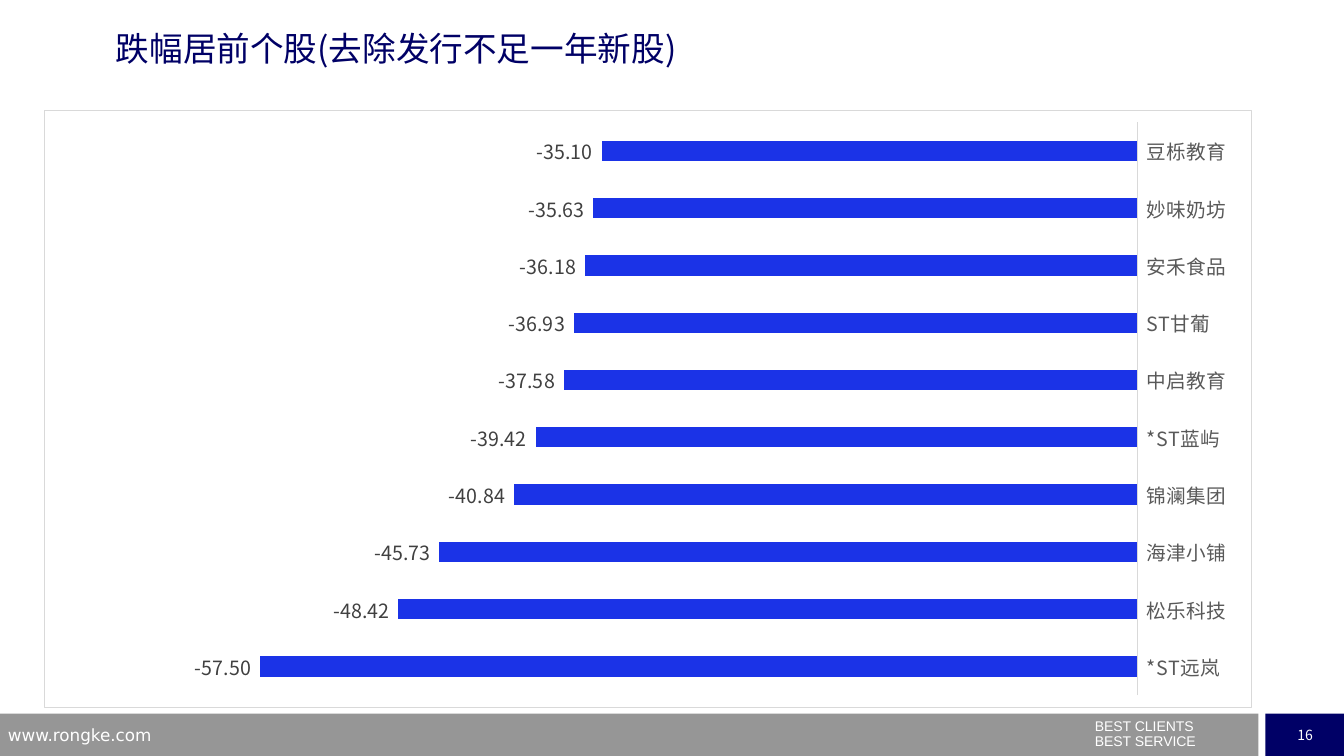
from lxml import etree
from pptx import Presentation
from pptx.chart.data import CategoryChartData
from pptx.dml.color import RGBColor
from pptx.enum.chart import XL_CHART_TYPE as ChartType
from pptx.enum.chart import XL_LABEL_POSITION as LabelPosition
from pptx.enum.chart import XL_TICK_LABEL_POSITION as TickLabels
from pptx.enum.chart import XL_TICK_MARK as TickMark
from pptx.enum.shapes import MSO_SHAPE as Shape
from pptx.enum.text import MSO_ANCHOR as Anchor
from pptx.enum.text import MSO_AUTO_SIZE as AutoSize
from pptx.enum.text import PP_ALIGN as Align
from pptx.oxml import parse_xml
from pptx.oxml.ns import nsdecls, qn
from pptx.util import Inches, Pt

CJK = "Noto Sans CJK SC"
NAVY, GREY, WHITE, BLUE, PALE = "000066", "969696", "FFFFFF", "1B33E7", "D9D9D9"
NUMBER_FORMAT = "0.00_ "
DECLINES = {
    "*ST远岚": -57.5,
    "松乐科技": -48.42,
    "海津小铺": -45.73,
    "锦澜集团": -40.84,
    "*ST蓝屿": -39.42,
    "中启教育": -37.58,
    "ST甘葡": -36.93,
    "安禾食品": -36.18,
    "妙味奶坊": -35.63,
    "豆栎教育": -35.1,
}
PLOT_LAYOUT = {"x": 0.02, "y": 0.02, "w": 0.885, "h": 0.96}


def color(hex_value):
    """Turn a hex string into a colour."""
    return RGBColor.from_string(hex_value)


def set_all(target, **values):
    """Set every given attribute on the target."""
    for name, value in values.items():
        setattr(target, name, value)


def style_font(font, size, hex_value, name=CJK):
    """Give a font its size, colour and typeface."""
    set_all(font, size=Pt(size), name=name)
    font.color.rgb = color(hex_value)


def match_east_asian(element):
    """Use each Latin typeface for East Asian text as well."""
    for latin in list(element.iter(qn("a:latin"))):
        east_asian = etree.Element(qn("a:ea"), typeface=latin.get("typeface"))
        latin.addnext(east_asian)


def write_lines(frame, lines, size, hex_value, name=CJK, **paragraph_format):
    """Write styled lines, one paragraph each."""
    for index, line in enumerate(lines):
        paragraph = frame.paragraphs[0] if index == 0 else frame.add_paragraph()
        run = paragraph.add_run()
        run.text = line
        style_font(run.font, size, hex_value, name)
        match_east_asian(paragraph._p)
        set_all(paragraph, **paragraph_format)
        if index:
            paragraph.space_before = Pt(size / 2)


def add_bar(slide, place, fill):
    """Add a plain filled rectangle."""
    bar = slide.shapes.add_shape(Shape.RECTANGLE, *map(Inches, place))
    bar.shadow.inherit = False
    bar.fill.solid()
    bar.fill.fore_color.rgb = color(fill)
    bar.line.fill.background()
    return bar


def add_text(slide, place, lines, size, name, **paragraph_format):
    """Add a white wrapped text box."""
    frame = slide.shapes.add_textbox(*map(Inches, place)).text_frame
    frame.word_wrap = True
    write_lines(frame, lines, size, WHITE, name, **paragraph_format)


def add_footer(slide):
    """Add the footer band with address, slogan and page number."""
    add_bar(slide, (0, 7.08, 12.48, 0.42), GREY)
    page = add_bar(slide, (12.55, 7.08, 0.79, 0.42), NAVY).text_frame
    set_all(page, word_wrap=False, vertical_anchor=Anchor.MIDDLE)
    write_lines(page, ["16"], 10, WHITE, alignment=Align.CENTER)
    slogan = ["BEST CLIENTS", "BEST SERVICE"]
    add_text(slide, (10.76, 7.14, 2.56, 0.36), slogan, 10, "Arial", line_spacing=0.5)
    add_text(slide, (-0.02, 7.14, 3.22, 0.26), ["www.rongke.com"], 12, "DejaVu Sans")


def fill_title(slide, text):
    """Place and format the slide title."""
    title = slide.shapes.title
    set_all(title, left=Inches(1.15), top=Inches(0.28), width=Inches(9), height=Inches(0.58))
    frame = title.text_frame
    set_all(frame, margin_left=0, margin_top=0, margin_right=0, margin_bottom=0,
            vertical_anchor=Anchor.TOP, auto_size=AutoSize.NONE, word_wrap=True)
    write_lines(frame, [text], 24, NAVY, alignment=Align.LEFT)


def frame_chart(chart):
    """Draw the chart border and fix the inner plot area."""
    space = chart._chartSpace
    border = parse_xml(
        f'<c:spPr {nsdecls("c", "a")}><a:noFill/><a:ln w="{Pt(0.75)}"><a:solidFill>'
        f'<a:srgbClr val="{PALE}"/></a:solidFill></a:ln></c:spPr>')
    space.find(qn("c:txPr")).addprevious(border)
    plot_area = space.find(qn("c:chart")).find(qn("c:plotArea"))
    for old_layout in plot_area.findall(qn("c:layout")):
        plot_area.remove(old_layout)
    modes = '<c:xMode val="edge"/><c:yMode val="edge"/>'
    sizes = "".join(f'<c:{key} val="{value}"/>' for key, value in PLOT_LAYOUT.items())
    plot_area.insert(0, parse_xml(
        f'<c:layout {nsdecls("c")}><c:manualLayout><c:layoutTarget val="inner"/>'
        f'{modes}{sizes}</c:manualLayout></c:layout>'))


def add_decline_chart(slide):
    """Add the bar chart of the largest declines."""
    data = CategoryChartData(number_format=NUMBER_FORMAT)
    data.categories = list(DECLINES)
    data.add_series("Series 1", list(DECLINES.values()))
    place = map(Inches, (0.44, 1.09, 11.98, 5.93))
    chart = slide.shapes.add_chart(ChartType.BAR_CLUSTERED, *place, data).chart
    set_all(chart, has_title=False, has_legend=False)
    style_font(chart.font, 10, "000000")

    stocks = chart.category_axis
    set_all(stocks, major_tick_mark=TickMark.NONE, minor_tick_mark=TickMark.NONE,
            tick_label_position=TickLabels.HIGH, has_major_gridlines=False)
    style_font(stocks.tick_labels.font, 14, "595959")
    stocks.format.line.width = Pt(0.75)
    stocks.format.line.color.rgb = color(PALE)
    set_all(chart.value_axis, visible=False, has_major_gridlines=False,
            minimum_scale=-70, maximum_scale=0)
    set_all(chart.value_axis.tick_labels, number_format=NUMBER_FORMAT,
            number_format_is_linked=False)

    plot = chart.plots[0]
    set_all(plot, gap_width=182, vary_by_categories=False, has_data_labels=True)
    set_all(plot.data_labels, show_value=True, position=LabelPosition.OUTSIDE_END,
            number_format=NUMBER_FORMAT, number_format_is_linked=False)
    style_font(plot.data_labels.font, 14, "404040")
    declines = plot.series[0]
    declines.invert_if_negative = False
    declines.format.fill.solid()
    declines.format.fill.fore_color.rgb = color(BLUE)
    frame_chart(chart)
    match_east_asian(chart._chartSpace)


def main():
    """Build and save the slide."""
    deck = Presentation()
    set_all(deck, slide_width=Inches(13.33), slide_height=Inches(7.5))
    slide = deck.slides.add_slide(deck.slide_layouts[5])
    add_footer(slide)
    fill_title(slide, "跌幅居前个股(去除发行不足一年新股)")
    add_decline_chart(slide)
    deck.save("out.pptx")


if __name__ == "__main__":
    main()
